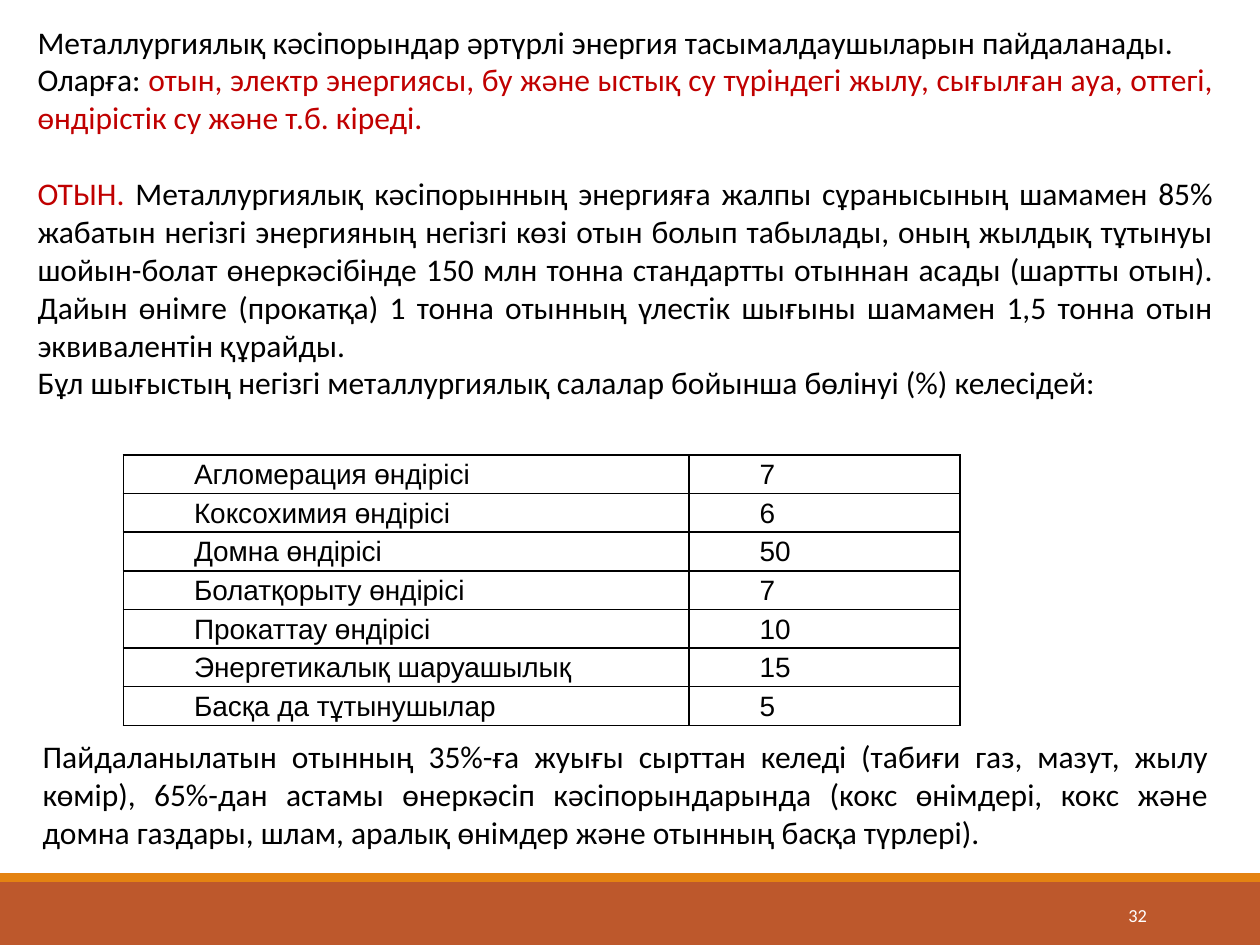
from dataclasses import dataclass

from lxml.etree import SubElement
from pptx import Presentation
from pptx.dml.color import RGBColor as Color
from pptx.enum.shapes import MSO_SHAPE as Shape
from pptx.enum.text import MSO_ANCHOR as Anchor, MSO_AUTO_SIZE as AutoSize, PP_ALIGN as Align
from pptx.oxml.ns import qn
from pptx.util import Inches, Pt


@dataclass(frozen=True)
class Theme:
    text: str = "000000"
    accent: str = "C00000"
    light: str = "FFFFFF"
    footer: str = "BD582C"
    stripe: str = "E48312"
    body_font: str = "Calibri"
    table_font: str = "Arial"
    body_size: float = 18
    table_size: float = 16
    number_size: float = 10.5


class SlideBuilder:
    """Draws styled elements on one slide."""

    def __init__(self, slide, theme):
        self.slide = slide
        self.theme = theme

    def style(self, run, font, size, color):
        run.font.name = font
        run.font.size = Pt(size)
        run.font.color.rgb = Color.from_string(color)

    def band(self, top, height, color):
        shape = self.slide.shapes.add_shape(Shape.RECTANGLE, 0, Inches(top), Inches(10), Inches(height))
        shape.shadow.inherit = False
        shape.fill.solid()
        shape.fill.fore_color.rgb = Color.from_string(color)
        shape.line.fill.background()

    def text_box(self, left, top, width, height):
        box = self.slide.shapes.add_textbox(Inches(left), Inches(top), Inches(width), Inches(height))
        box.text_frame.word_wrap = True
        return box.text_frame

    def page_number(self, number):
        frame = self.text_box(8.12, 7.06, 1.08, 0.4)
        frame.vertical_anchor = Anchor.MIDDLE
        frame.text = number
        paragraph = frame.paragraphs[0]
        paragraph.alignment = Align.RIGHT
        self.style(paragraph.runs[0], self.theme.body_font, self.theme.number_size, self.theme.light)

    def body(self, left, top, width, height, paragraphs):
        frame = self.text_box(left, top, width, height)
        frame.auto_size = AutoSize.SHAPE_TO_FIT_TEXT
        for index, (space_before, runs) in enumerate(paragraphs):
            paragraph = frame.add_paragraph() if index else frame.paragraphs[0]
            paragraph.alignment = Align.JUSTIFY
            if space_before:
                paragraph.space_before = Pt(space_before)
            for text, color in runs:
                run = paragraph.add_run()
                run.text = text
                self.style(run, self.theme.body_font, self.theme.body_size, color)

    def border(self, cell):
        properties = cell._tc.get_or_add_tcPr()
        for side in ("a:lnL", "a:lnR", "a:lnT", "a:lnB"):
            line = SubElement(properties, qn(side), w=str(Pt(1)))
            fill = SubElement(line, qn("a:solidFill"))
            SubElement(fill, qn("a:srgbClr"), val=self.theme.text)

    def cell(self, cell, text):
        self.border(cell)
        cell.fill.background()
        cell.margin_left = cell.margin_right = Inches(0.07)
        cell.margin_top = cell.margin_bottom = 0
        cell.text = text
        paragraph = cell.text_frame.paragraphs[0]
        paragraph.alignment = Align.JUSTIFY
        paragraph.line_spacing = 1.15
        paragraph._p.get_or_add_pPr().set("indent", str(Inches(0.49)))
        self.style(paragraph.runs[0], self.theme.table_font, self.theme.table_size, self.theme.text)

    def table(self, left, top, widths, row_height, rows):
        frame = self.slide.shapes.add_table(
            len(rows), len(widths), Inches(left), Inches(top),
            Inches(sum(widths)), Inches(row_height * len(rows)))
        table = frame.table
        table.first_row = table.horz_banding = False
        for column, width in zip(table.columns, widths):
            column.width = Inches(width)
        for row, values in zip(table.rows, rows):
            row.height = Inches(row_height)
            for cell, value in zip(row.cells, values):
                self.cell(cell, value)


def main():
    presentation = Presentation()
    presentation.slide_width = Inches(10)
    presentation.slide_height = Inches(7.5)
    theme = Theme()
    slide = presentation.slides.add_slide(presentation.slide_layouts[6])
    builder = SlideBuilder(slide, theme)

    builder.band(7, 0.5, theme.footer)
    builder.band(6.93, 0.07, theme.stripe)
    builder.page_number("32")
    builder.body(0.2, 0.13, 9.53, 3.43, [
        (0, [("Металлургиялық кәсіпорындар әртүрлі энергия тасымалдаушыларын пайдаланады.", theme.text)]),
        (0, [("Оларға: ", theme.text),
             ("отын, электр энергиясы, бу және ыстық су түріндегі жылу, сығылған ауа, оттегі, "
              "өндірістік су және т.б. кіреді.", theme.accent)]),
        (22, [("ОТЫН. ", theme.accent),
              ("Металлургиялық кәсіпорынның энергияға жалпы сұранысының шамамен 85% жабатын негізгі "
               "энергияның негізгі көзі отын болып табылады, оның жылдық тұтынуы шойын-болат "
               "өнеркәсібінде 150 млн тонна стандартты отыннан асады (шартты отын). Дайын өнімге "
               "(прокатқа) 1 тонна отынның үлестік шығыны шамамен 1,5 тонна отын эквивалентін "
               "құрайды.", theme.text)]),
        (0, [("Бұл шығыстың негізгі металлургиялық салалар бойынша бөлінуі (%) келесідей:", theme.text)]),
    ])
    builder.table(0.98, 3.61, (4.49, 2.15), 0.29, [
        ("Агломерация өндірісі", "7"),
        ("Коксохимия өндірісі", "6"),
        ("Домна өндірісі", "50"),
        ("Болатқорыту өндірісі", "7"),
        ("Прокаттау өндірісі", "10"),
        ("Энергетикалық шаруашылық", "15"),
        ("Басқа да тұтынушылар", "5"),
    ])
    builder.body(0.24, 5.8, 9.45, 1.01, [
        (0, [("Пайдаланылатын отынның 35%-ға жуығы сырттан келеді (табиғи газ, мазут, жылу көмір), "
              "65%-дан астамы өнеркәсіп кәсіпорындарында (кокс өнімдері, кокс және домна газдары, "
              "шлам, аралық өнімдер және отынның басқа түрлері).", theme.text)]),
    ])
    presentation.save("out.pptx")


if __name__ == "__main__":
    main()
